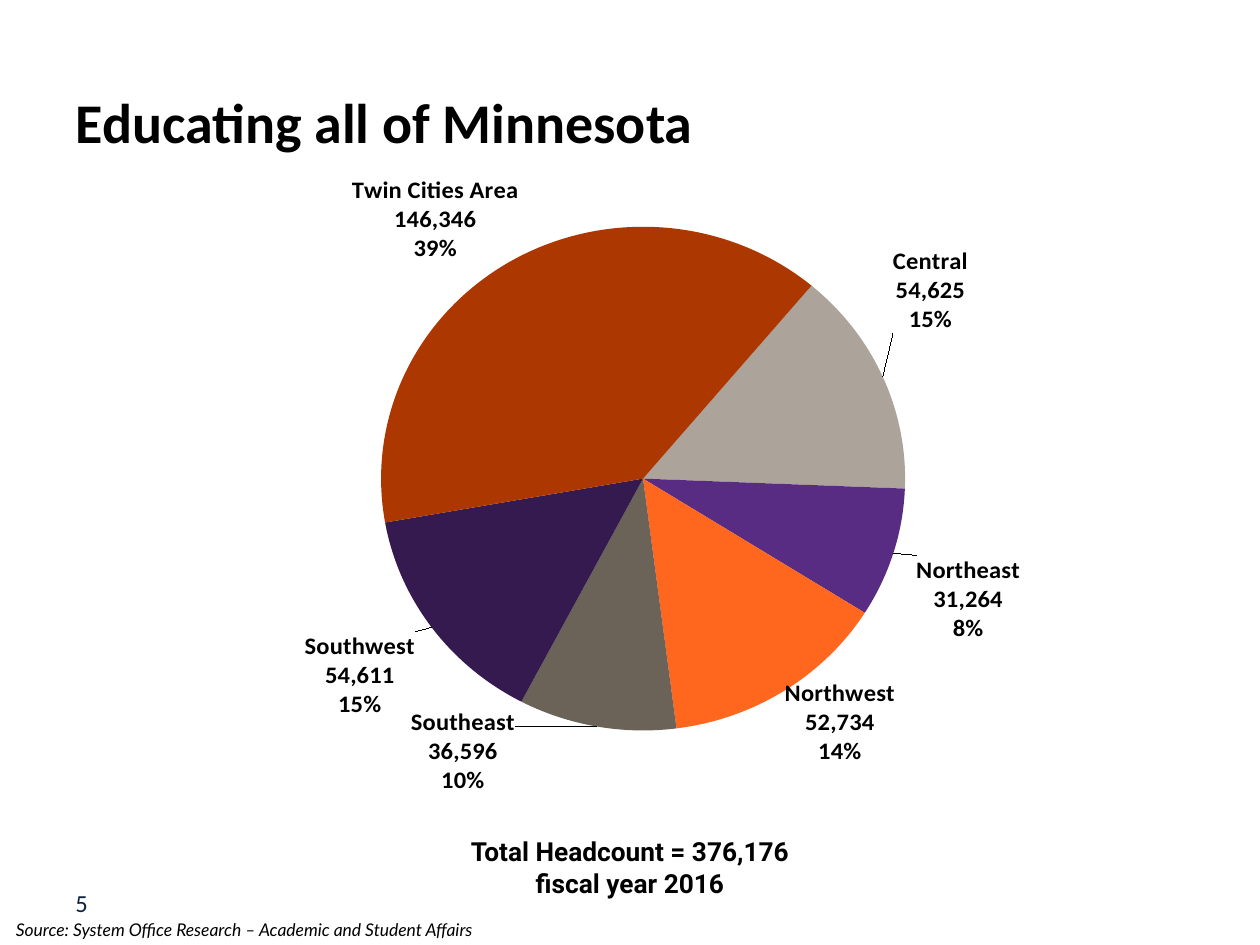
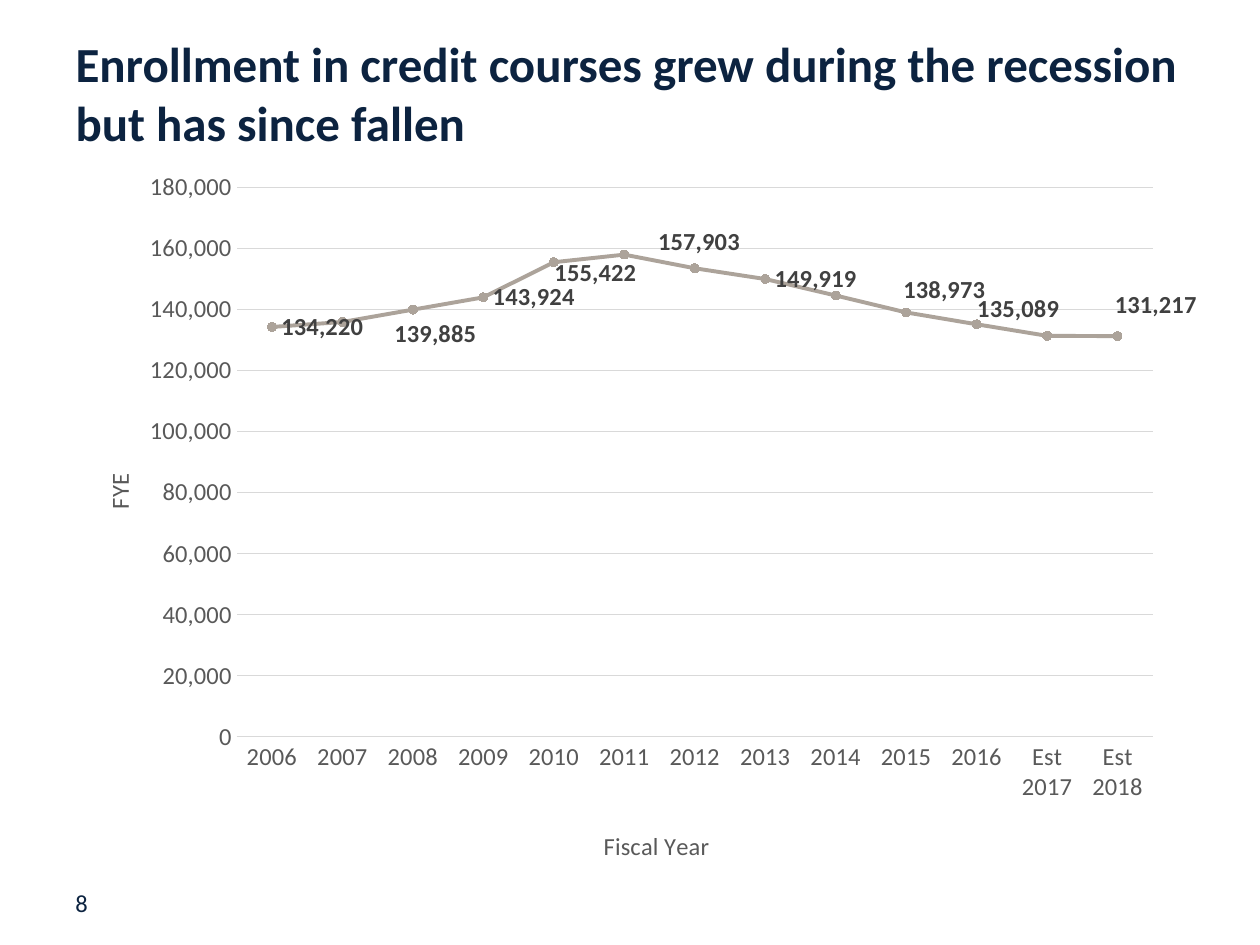
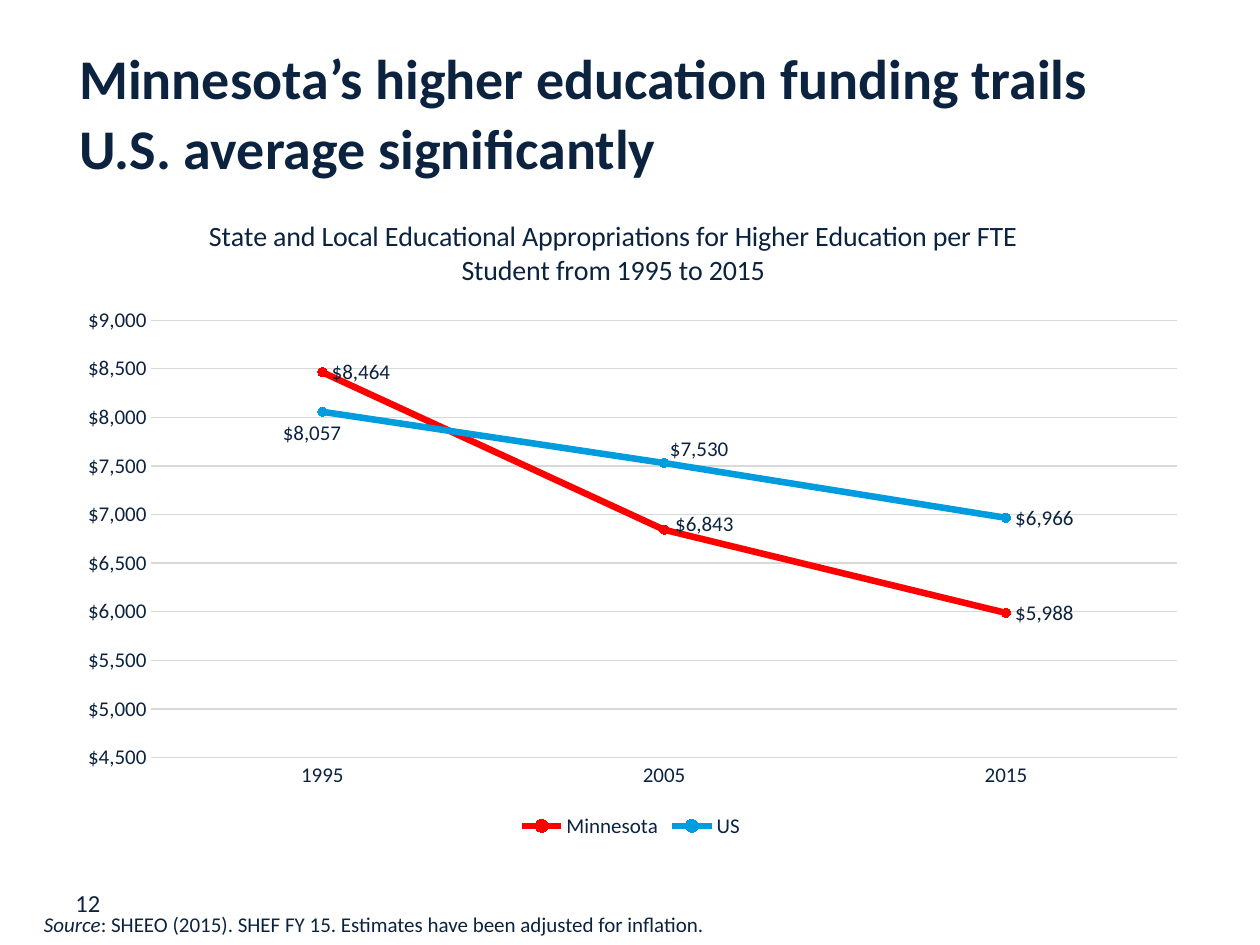
"""Builds three slides on Minnesota enrollment and higher education funding."""
from copy import deepcopy

from pptx import Presentation
from pptx.chart.data import CategoryChartData
from pptx.dml.color import RGBColor
from pptx.enum import chart as kinds, text
from pptx.oxml import xmlchemy as xml
from pptx.oxml.ns import qn
from pptx.util import Pt

BLACK = RGBColor(0x00, 0x00, 0x00)
NAVY = RGBColor(0x0C, 0x23, 0x40)
GREY = RGBColor(0x59, 0x59, 0x59)
DARK_GREY = RGBColor(0x40, 0x40, 0x40)
RULE = RGBColor(0xD9, 0xD9, 0xD9)
STONE = RGBColor(0xAC, 0xA3, 0x9A)
PURPLE = RGBColor(0x58, 0x2C, 0x83)
ORANGE = RGBColor(0xFF, 0x67, 0x1F)
TAUPE = RGBColor(0x6B, 0x62, 0x58)
PLUM = RGBColor(0x35, 0x1A, 0x4F)
RUST = RGBColor(0xAC, 0x37, 0x00)
RED = RGBColor(0xFF, 0x00, 0x00)
BLUE = RGBColor(0x00, 0x9C, 0xDE)

LEFT, MIDDLE, BOTTOM = text.PP_ALIGN.LEFT, text.MSO_ANCHOR.MIDDLE, text.MSO_ANCHOR.BOTTOM
NUMBER, DOLLARS = "#,##0", '"$"#,##0'

REGIONS = [
    ("Central", 54625, STONE, (2, -24)),
    ("Northeast", 31264, PURPLE, (9, 0)),
    ("Northwest", 52734, ORANGE, (-2, -11)),
    ("Southeast", 36596, TAUPE, (-46, -14)),
    ("Southwest", 54611, PLUM, (-6, 0)),
    ("Twin Cities Area", 146346, RUST, (6, 5)),
]
ENROLLMENT = {
    "box": (36, 90, 648, 414),
    "plot": (99.5, 17, 524.5, 314),
    "categories": [str(year) for year in range(2006, 2017)] + ["Est 2017", "Est 2018"],
    "format": NUMBER,
    "scale": (0, 180000, 20000),
    "axis_font": (14, GREY),
    "label_font": (14, DARK_GREY, True),
    "line_width": 2.25,
    "series": [{
        "name": "FYE",
        "values": [134220, 135839, 139885, 143924, 155422, 157903, 153447,
                   149919, 144524, 138973, 135089, 131314, 131217],
        "color": STONE,
        "moved": {2: (-16, 14), 4: (-5, 6), 5: (14, -7), 9: (-7, -13),
                  10: (-5, -9), 12: (-7, -18)},
        "hidden": [1, 6, 8, 11],
    }],
}
FUNDING = {
    "box": (36.5, 108, 648, 374),
    "plot": (50, 75, 586, 250),
    "categories": ["1995", "2005", "2015"],
    "format": DOLLARS,
    "scale": (4500, 9000, 500),
    "axis_font": (12, NAVY),
    "label_font": (12, NAVY),
    "line_width": 3.75,
    "series": [
        {"name": "Minnesota", "values": [8464, 6843, 5988], "color": RED,
         "moved": {1: (1, -3)}, "hidden": []},
        {"name": "US", "values": [8057, 7530, 6966], "color": BLUE,
         "moved": {0: (-28, 12), 1: (-2, -8)}, "hidden": []},
    ],
}
FUNDING_TITLE = ("State and Local Educational Appropriations for Higher Education "
                 "per FTE Student from 1995 to 2015")


def style(font, size, color, bold=False, italic=False, name="Calibri"):
    font.size, font.name, font.bold, font.italic = Pt(size), name, bold, italic
    font.color.rgb = color


def element(tag, value=None):
    node = xml.OxmlElement(f"c:{tag}")
    if value is not None:
        node.set("val", str(value))
    return node


def fill_frame(frame, lines, anchor, align, spacing=None):
    frame.word_wrap, frame.auto_size = True, text.MSO_AUTO_SIZE.NONE
    frame.vertical_anchor = anchor
    for index, spans in enumerate(lines):
        para = frame.add_paragraph() if index else frame.paragraphs[0]
        para.alignment, para.space_before = align, Pt(0)
        if spacing:
            para.line_spacing = Pt(spacing)
        for words, *look in spans:
            span = para.add_run()
            span.text = words
            style(span.font, *look)


def add_text(page, box, lines, anchor=text.MSO_ANCHOR.TOP, align=LEFT):
    shape = page.shapes.add_textbox(*map(Pt, box))
    fill_frame(shape.text_frame, lines, anchor, align)


def add_page(deck, number, title, box, size=32, color=NAVY, anchor=MIDDLE, spacing=None):
    page = deck.slides.add_slide(deck.slide_layouts[5])
    holder = page.shapes.title
    holder.left, holder.top, holder.width, holder.height = map(Pt, box)
    fill_frame(holder.text_frame, [[(line, size, color, True)] for line in title],
               anchor, LEFT, spacing)
    add_text(page, (36, 504, 156, 24), [[(str(number), 14, NAVY)]])
    return page


def set_layout(parent, index, chart_box, place, inner=False):
    """Places a chart part; place is in points, relative to the chart or its usual spot."""
    for old in parent.findall(qn("c:layout")):
        parent.remove(old)
    layout, manual = element("layout"), element("manualLayout")
    if inner:
        manual.append(element("layoutTarget", "inner"))
    if parent.tag != qn("c:dLbl"):
        manual.append(element("xMode", "edge"))
        manual.append(element("yMode", "edge"))
    for tag, length, whole in zip("xywh", place, chart_box[2:] * 2):
        manual.append(element(tag, round(length / whole, 4)))
    layout.append(manual)
    parent.insert(index, layout)


def set_title(owner, words, look, chart_box, spot):
    owner.has_title = True
    title = owner.chart_title if hasattr(owner, "chart_title") else owner.axis_title
    span = title.text_frame.paragraphs[0].add_run()
    span.text = words
    style(span.font, *look)
    set_layout(title._element, 1, chart_box, spot)


def label_points(series, chart_box, number_format, look, position, moved, hidden=(), pie=False):
    labels = series.data_labels
    labels.number_format, labels.number_format_is_linked = number_format, False
    labels.position, labels.show_value = position, True
    labels.show_category_name = labels.show_percentage = pie
    style(labels.font, *look)
    group = labels._element
    for leader in group.findall(qn("c:showLeaderLines")):
        leader.set("val", str(int(pie)))
    if pie:
        separator = element("separator")
        separator.text = "\n"
        group.find(qn("c:showBubbleSize")).addnext(separator)
    shared = [part for part in group if part.tag != qn("c:showLeaderLines")]
    for place, index in enumerate(sorted([*moved, *hidden])):
        label = element("dLbl")
        label.append(element("idx", index))
        if index in hidden:
            label.append(element("delete", 1))
        else:
            label.extend(deepcopy(part) for part in shared)
            set_layout(label, 1, chart_box, moved[index])
        group.insert(place, label)


def add_chart(page, kind, box, plot, categories, rows, number_format=NUMBER):
    data = CategoryChartData(number_format=number_format)
    data.categories = categories
    for name, values in rows:
        data.add_series(name, values)
    chart = page.shapes.add_chart(kind, *map(Pt, box), data).chart
    chart.has_title = chart.has_legend = False
    style(chart.font, 10, BLACK)
    set_layout(chart._chartSpace.chart.plotArea, 0, box, plot, inner=True)
    return chart


def add_region_pie(page):
    names, counts, colors, offsets = zip(*REGIONS)
    box = (36, 95, 648, 374)
    chart = add_chart(page, kinds.XL_CHART_TYPE.PIE, box, (155.5, 36, 352, 299.5),
                      names, [("Headcount", counts)])
    plot = chart.plots[0]
    plot.vary_by_categories = True
    for old in plot._element.findall(qn("c:firstSliceAng")):
        plot._element.remove(old)
    plot._element.append(element("firstSliceAng", 40))
    series = plot.series[0]
    for index, color in enumerate(colors):
        fill = series.points[index].format.fill
        fill.solid()
        fill.fore_color.rgb = color
    label_points(series, box, "0%", (14, BLACK, True),
                 kinds.XL_LABEL_POSITION.OUTSIDE_END, dict(enumerate(offsets)), pie=True)


def add_trend(page, trend):
    rows = [(row["name"], row["values"]) for row in trend["series"]]
    chart = add_chart(page, kinds.XL_CHART_TYPE.LINE_MARKERS, trend["box"], trend["plot"],
                      trend["categories"], rows, trend["format"])
    chart.plots[0].vary_by_categories = False
    years, amounts = chart.category_axis, chart.value_axis
    for axis in (years, amounts):
        axis.major_tick_mark = axis.minor_tick_mark = kinds.XL_TICK_MARK.NONE
        style(axis.tick_labels.font, *trend["axis_font"])
    amounts.tick_labels.number_format = trend["format"]
    amounts.tick_labels.number_format_is_linked = False
    amounts.minimum_scale, amounts.maximum_scale, amounts.major_unit = trend["scale"]
    amounts.has_major_gridlines = True
    amounts.format.line.fill.background()
    for line in (years.format.line, amounts.major_gridlines.format.line):
        line.color.rgb, line.width = RULE, Pt(0.75)
    for series, row in zip(chart.plots[0].series, trend["series"]):
        series.smooth = False
        series.format.line.color.rgb = row["color"]
        series.format.line.width = Pt(trend["line_width"])
        marker = series.marker
        marker.style, marker.size = kinds.XL_MARKER_STYLE.CIRCLE, 5
        marker.format.fill.solid()
        marker.format.fill.fore_color.rgb = row["color"]
        marker.format.line.color.rgb = row["color"]
        label_points(series, trend["box"], trend["format"], trend["label_font"],
                     kinds.XL_LABEL_POSITION.RIGHT, row["moved"], row["hidden"])
    return chart


def main():
    deck = Presentation()
    deck.slide_width, deck.slide_height = Pt(720), Pt(540)

    page = add_page(deck, 5, ["Educating all of Minnesota"], (36, 24, 647, 90), color=BLACK)
    add_region_pie(page)
    total = ["Total Headcount = 376,176", "fiscal year 2016"]
    add_text(page, (144, 479.5, 432, 32),
             [[(line, 15, BLACK, True, False, "Roboto")] for line in total],
             MIDDLE, text.PP_ALIGN.CENTER)
    add_text(page, (2, 521.5, 440, 19),
             [[("Source: System Office Research – Academic and Student Affairs",
                10, BLACK, False, True, "Lato")]])

    page = add_page(deck, 8, ["Enrollment in credit courses grew during the recession "
                              "but has since fallen"], (36, 42, 648, 48), 28, anchor=BOTTOM)
    chart = add_trend(page, ENROLLMENT)
    set_title(chart.category_axis, "Fiscal Year", (14, GREY), ENROLLMENT["box"], (307, 381))
    set_title(chart.value_axis, "FYE", (14, GREY), ENROLLMENT["box"], (20, 178))

    page = add_page(deck, 12, ["Minnesota’s higher education funding trails",
                               "U.S. average significantly"], (38, 18, 664.5, 90), spacing=40)
    chart = add_trend(page, FUNDING)
    set_title(chart, FUNDING_TITLE, (16, NAVY), FUNDING["box"], (80, 13))
    chart.has_legend = True
    chart.legend.position = kinds.XL_LEGEND_POSITION.BOTTOM
    chart.legend.include_in_layout = False
    style(chart.legend.font, 12, NAVY)
    add_text(page, (18, 517.5, 576, 22),
             [[("Source", 12, NAVY, False, True),
               (": SHEEO (2015). SHEF FY 15. Estimates have been adjusted for inflation.",
                12, NAVY)]])

    deck.save("out.pptx")


if __name__ == "__main__":
    main()
